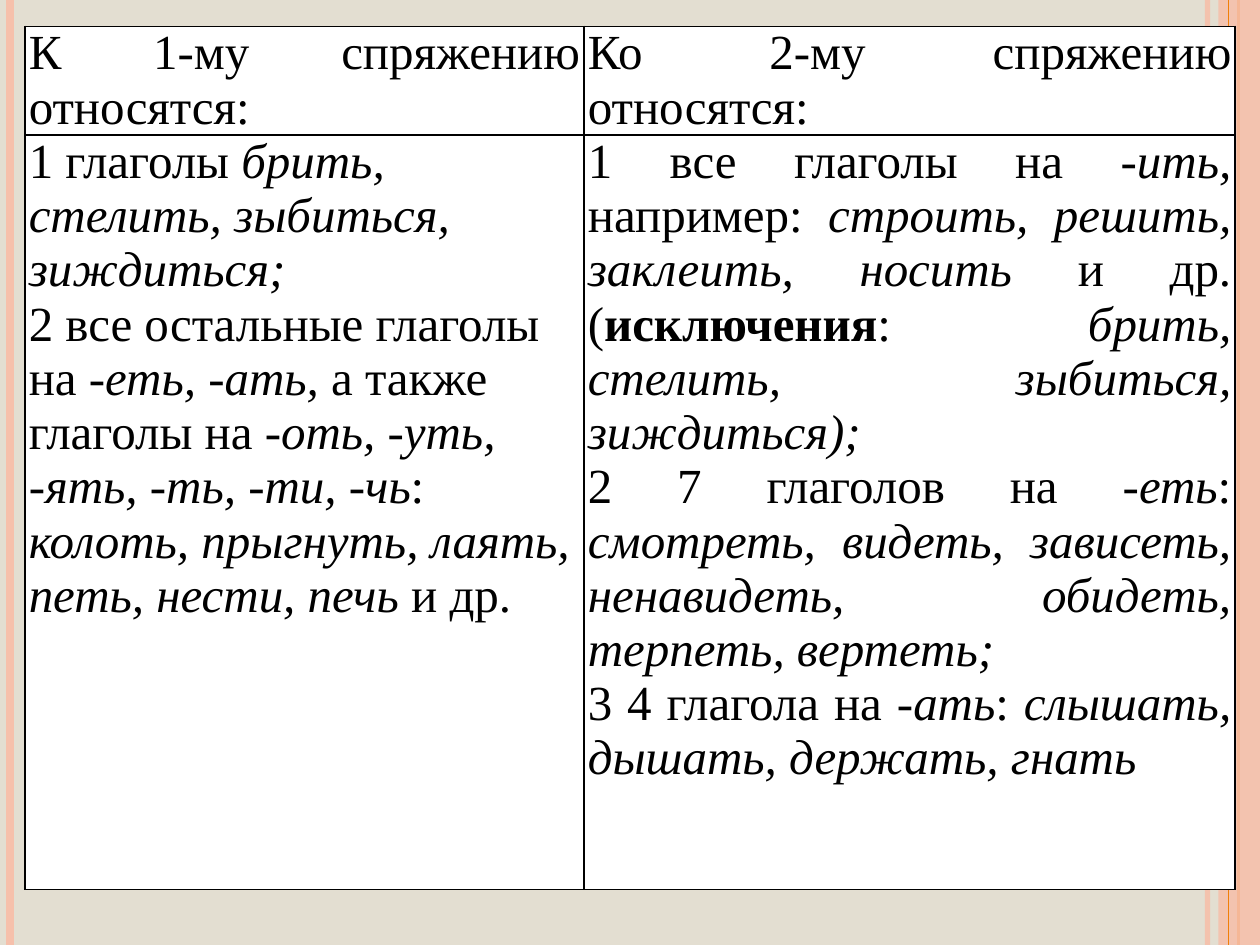
from lxml import etree
from pptx import Presentation
from pptx import util as u
from pptx.dml.color import RGBColor
from pptx.enum import shapes, text
from pptx.oxml import parse_xml
from pptx.oxml.ns import nsdecls, qn

BACKGROUND = RGBColor(0xE3, 0xDE, 0xD1)
PEACH = RGBColor(0xF6, 0xC0, 0xAB)
ORANGE = RGBColor(0xF0, 0x7F, 0x09)
WHITE = RGBColor(0xFF, 0xFF, 0xFF)
BLACK = RGBColor(0, 0, 0)
FONT = "Times New Roman"
PAGE_WIDTH, PAGE_HEIGHT = u.Cm(25.4), u.Cm(19.05)

JUSTIFY, LEFT = text.PP_ALIGN.JUSTIFY, text.PP_ALIGN.LEFT
PLAIN, ITALIC, BOLD = "plain", "italic", "bold"

# Each paragraph is a list of (words, style) runs
FIRST_HEADING = [[("К 1-му спряжению относятся:", PLAIN)]]
SECOND_HEADING = [[("Ко 2-му спряжению относятся:", PLAIN)]]
FIRST_VERBS = [
    [("1 глаголы ", PLAIN), ("брить, стелить, зыбиться, зиждиться;", ITALIC)],
    [("2 все остальные глаголы на ", PLAIN), ("-еть, -ать,", ITALIC),
     (" а также глаголы на ", PLAIN), ("-оть, -уть, -ять, -ть, -ти, -чь", ITALIC),
     (": ", PLAIN), ("колоть, прыгнуть, лаять, петь, нести, печь ", ITALIC),
     ("и др.", PLAIN)],
]
SECOND_VERBS = [
    [("1 все глаголы на ", PLAIN), ("-ить,", ITALIC), (" например: ", PLAIN),
     ("строить, решить, заклеить, носить ", ITALIC), ("и др. (", PLAIN),
     ("исключения", BOLD), (": ", PLAIN),
     ("брить, стелить, зыбиться, зиждиться); ", ITALIC)],
    [("2 7 глаголов на ", PLAIN), ("-еть", ITALIC), (": ", PLAIN),
     ("смотреть, видеть, зависеть, ненавидеть, обидеть, терпеть, вертеть; ", ITALIC)],
    [("3 4 глагола на ", PLAIN), ("-ать", ITALIC), (": ", PLAIN),
     ("слышать, дышать, держать, гнать", ITALIC)],
]
ROWS = [
    [(FIRST_HEADING, JUSTIFY), (SECOND_HEADING, JUSTIFY)],
    [(FIRST_VERBS, LEFT), (SECOND_VERBS, JUSTIFY)],
]


def set_opacity(fill_parent, percent):
    color = fill_parent.find(".//" + qn("a:srgbClr"))
    etree.SubElement(color, qn("a:alpha")).set("val", str(percent * 1000))


def add_stripe(page, x, top, height, color, width, opacity=100):
    stripe = page.shapes.add_connector(
        shapes.MSO_CONNECTOR.STRAIGHT, x, top, x, top + height)
    stripe.line.color.rgb = color
    stripe.line.width = u.Pt(width)
    properties = stripe._element.spPr
    if opacity < 100:
        set_opacity(properties, opacity)
    etree.SubElement(properties, qn("a:effectLst"))


def add_side_stripes(page, left, top, width, height):
    right = left + width
    add_stripe(page, right - u.Cm(1.06), top, height, PEACH, 3, 93)
    add_stripe(page, left + u.Cm(0.21), top, height, PEACH, 4.5)
    add_stripe(page, right - u.Cm(0.43), top, height, ORANGE, 1.5)

    # Translucent band along the right edge
    band_width = u.Cm(0.84)
    band = page.shapes.add_shape(
        shapes.MSO_SHAPE.RECTANGLE, right - band_width, top, band_width, height)
    band.shadow.inherit = False
    band.fill.solid()
    band.fill.fore_color.rgb = PEACH
    set_opacity(band._element.spPr, 87)
    band.line.fill.background()

    add_stripe(page, right - u.Cm(0.63), top, height, ORANGE, 0.75)


def style_cell(cell):
    cell.margin_left = cell.margin_right = u.Cm(0.08)
    cell.margin_top = cell.margin_bottom = 0
    properties = cell._tc.get_or_add_tcPr()
    for side in ("lnL", "lnR", "lnT", "lnB"):
        properties.append(parse_xml(
            f'<a:{side} {nsdecls("a")} w="{u.Pt(1)}"><a:solidFill>'
            f'<a:srgbClr val="{BLACK}"/></a:solidFill></a:{side}>'))
    cell.fill.solid()
    cell.fill.fore_color.rgb = WHITE


def write_cell(cell, paragraphs, alignment):
    frame = cell.text_frame
    for index, runs in enumerate(paragraphs):
        para = frame.add_paragraph() if index else frame.paragraphs[0]
        para.alignment = alignment
        for words, style in runs:
            span = para.add_run()
            span.text = words
            span.font.name = FONT
            span.font.size = u.Pt(28)
            span.font.color.rgb = BLACK
            span.font.italic = style == ITALIC
            span.font.bold = style == BOLD


def add_conjugation_table(page, left, top, width, height):
    table = page.shapes.add_table(2, 2, left, top, width, height).table
    table.first_row = table.horz_banding = False
    first_column, heading_row = u.Cm(11.27), u.Cm(2.18)
    table.columns[0].width = first_column
    table.columns[1].width = width - first_column
    table.rows[0].height = heading_row
    table.rows[1].height = height - heading_row
    for row, contents in zip(table.rows, ROWS):
        for cell, (paragraphs, alignment) in zip(row.cells, contents):
            style_cell(cell)
            write_cell(cell, paragraphs, alignment)


def main():
    deck = Presentation()
    deck.slide_width, deck.slide_height = PAGE_WIDTH, PAGE_HEIGHT
    page = deck.slides.add_slide(deck.slide_layouts[6])
    page.background.fill.solid()
    page.background.fill.fore_color.rgb = BACKGROUND
    add_side_stripes(page, 0, 0, PAGE_WIDTH, PAGE_HEIGHT)
    add_conjugation_table(page, u.Cm(0.5), u.Cm(0.53), u.Cm(24.4), u.Cm(17.4))
    deck.save("out.pptx")


if __name__ == "__main__":
    main()
